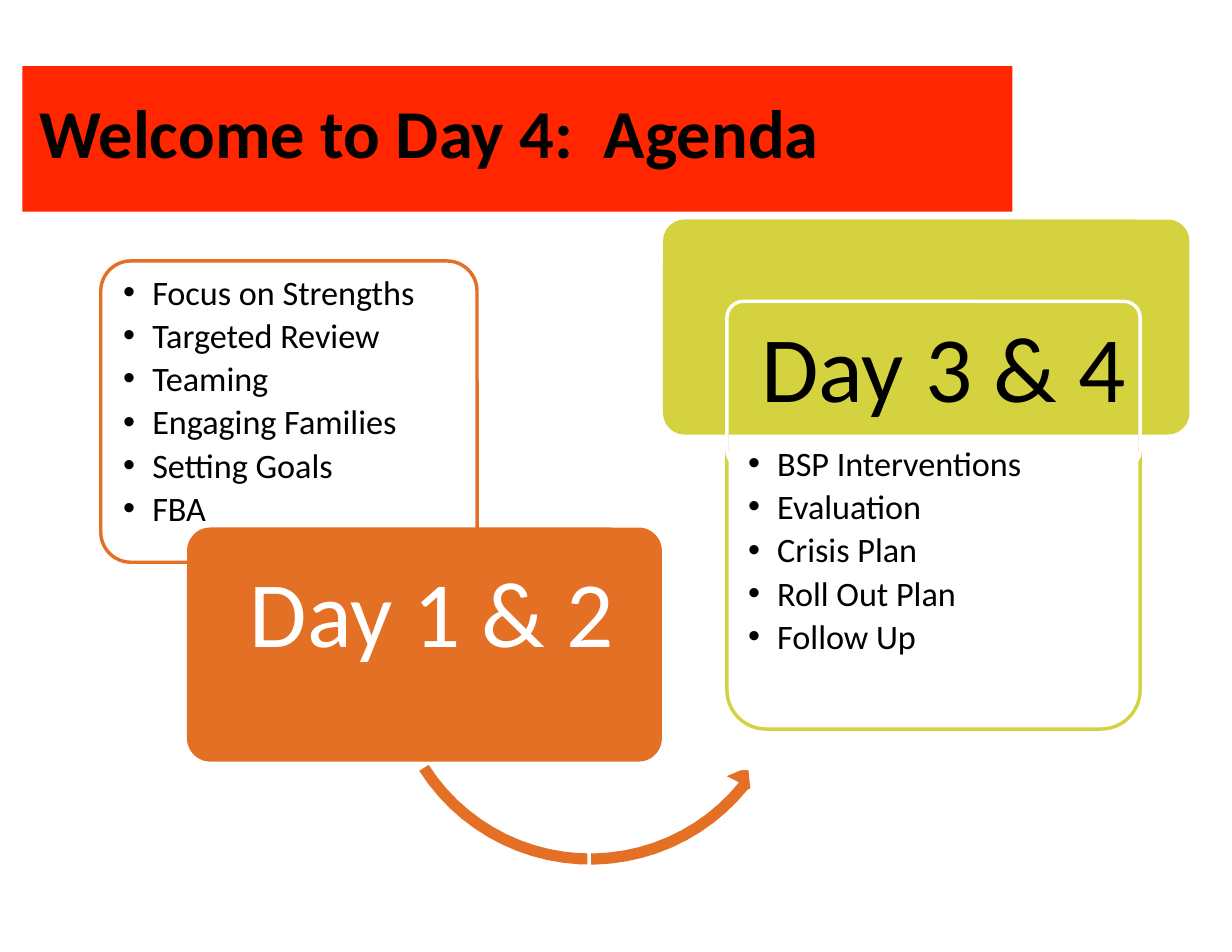
from math import cos, radians, sin

from lxml.etree import SubElement
from pptx import Presentation
from pptx.dml.color import RGBColor
from pptx.enum.shapes import MSO_SHAPE
from pptx.oxml.ns import qn
from pptx.util import Inches, Pt

COLORS = {
    "red": "FF2600",
    "orange": "E47026",
    "lime": "D5D23F",
    "white": "FFFFFF",
    "black": "000000",
}
FIRST = ["Focus on Strengths", "Targeted Review", "Teaming",
         "Engaging Families", "Setting Goals", "FBA"]
SECOND = ["BSP Interventions", "Evaluation", "Crisis Plan",
          "Roll Out Plan", "Follow Up"]


def color(name):
    return RGBColor.from_string(COLORS[name])


def paint(shape, fill=None, line=None):
    shape.shadow.inherit = False
    if fill:
        shape.fill.solid()
        shape.fill.fore_color.rgb = color(fill)
    else:
        shape.fill.background()
    if line:
        shape.line.color.rgb = color(line)
        shape.line.width = Pt(2.21)
    else:
        shape.line.fill.background()


def add_box(slide, area, fill=None, line=None, curve=0.1):
    kind = MSO_SHAPE.ROUNDED_RECTANGLE if curve else MSO_SHAPE.RECTANGLE
    shape = slide.shapes.add_shape(kind, *map(Inches, area))
    if curve:
        shape.adjustments[0] = curve
    paint(shape, fill, line)


def add_text(slide, area, lines, size, tint="black", bold=False):
    frame = slide.shapes.add_textbox(*map(Inches, area)).text_frame
    frame.word_wrap = True
    frame.margin_left = frame.margin_right = 0
    frame.margin_top = frame.margin_bottom = 0
    frame.text = "\n".join(lines)
    for para in frame.paragraphs:
        font = para.runs[0].font
        font.name = "Calibri"
        font.size = Pt(size)
        font.bold = bold
        font.color.rgb = color(tint)
    return frame


def add_list(slide, area, lines):
    frame = add_text(slide, area, lines, 22)
    for index, para in enumerate(frame.paragraphs):
        para.space_before = Pt(1.4 if index else 0)
        props = para._p.get_or_add_pPr()
        props.set("marL", str(Inches(0.26)))
        props.set("indent", str(-Inches(0.26)))
        SubElement(props, qn("a:buFont"), typeface="Arial")
        SubElement(props, qn("a:buChar"), char="•")


def arc(radius, start, end, steps=24):
    for step in range(steps + 1):
        turn = radians(start + (end - start) * step / steps)
        yield 5.27 + radius * cos(turn), 5.91 + radius * sin(turn)


def add_arrow(slide):
    head = [(6.7, 7.04), (6.68, 6.85), (6.49, 6.93)]
    points = [*arc(1.81, 147.5, 39), *head, *arc(1.71, 39, 147.5)]
    spots = [(Inches(x), Inches(y)) for x, y in points]
    outline = slide.shapes.build_freeform(*spots[0])
    outline.add_line_segments(spots[1:], close=True)
    paint(outline.convert_to_shape(), "orange")


def main():
    deck = Presentation()
    deck.slide_width, deck.slide_height = Inches(11), Inches(8.5)
    slide = deck.slides.add_slide(deck.slide_layouts[6])

    add_box(slide, (0.2, 0.59, 8.84, 1.3), "red", curve=0)
    add_box(slide, (0.9, 2.33, 3.36, 2.69), line="orange")
    add_arrow(slide)
    add_box(slide, (1.67, 4.71, 4.24, 2.09), "orange")
    add_box(slide, (5.26, 6.86, 1.89, 1.62), line="white", curve=0.05)
    add_list(slide, (1.1, 2.42, 3.1, 2.3), FIRST)
    add_text(slide, (2.23, 4.95, 3.6, 1.02), ["Day 1 & 2"], 60, "white")

    add_box(slide, (6.49, 3.01, 3.69, 3.5), line="lime")
    add_box(slide, (5.92, 1.96, 4.7, 1.92), "lime")
    add_box(slide, (6.49, 2.69, 3.69, 1.48), line="white")
    add_text(slide, (6.8, 2.76, 3.6, 1.02), ["Day 3 & 4"], 60)
    add_list(slide, (6.68, 3.95, 3.4, 2.3), SECOND)

    add_text(slide, (0.35, 0.8, 8.2, 0.75), ["Welcome to Day 4:  Agenda"],
             44, bold=True)
    deck.save("out.pptx")


if __name__ == "__main__":
    main()
